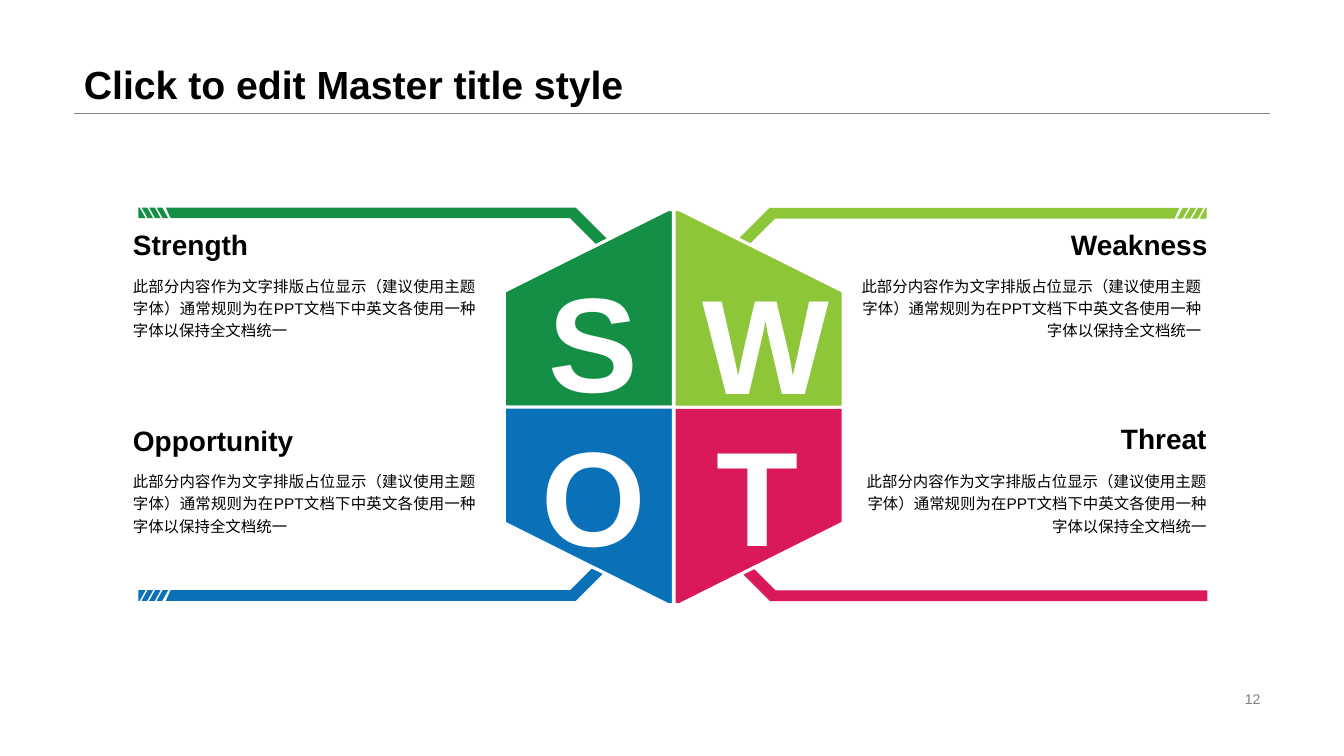
from dataclasses import dataclass

from lxml.etree import SubElement
from pptx import Presentation
from pptx.dml.color import RGBColor
from pptx.enum.shapes import MSO_CONNECTOR as Connector
from pptx.enum.text import MSO_ANCHOR as Anchor, PP_ALIGN as Align
from pptx.oxml.ns import qn
from pptx.util import Cm, Pt

BODY = "此部分内容作为文字排版占位显示（建议使用主题字体）通常规则为在PPT文档下中英文各使用一种字体以保持全文档统一"
CENTER_X, CENTER_Y = 16.98, 10.26
BODY_W, BODY_H = 8.64, 3.18
HEADING_W, HEADING_H = 4.98, 0.86


def color(hex_code):
    return RGBColor.from_string(hex_code)


def write(frame, text, size=11, bold=False, ink="000000", align=Align.LEFT,
          anchor=Anchor.TOP, spacing=None, inset=None):
    frame.word_wrap = True
    frame.vertical_anchor = anchor
    if inset is not None:
        frame.margin_left = frame.margin_right = Cm(inset)
        frame.margin_top = frame.margin_bottom = Cm(inset)
    paragraph = frame.paragraphs[0]
    paragraph.alignment = align
    paragraph.line_spacing = spacing
    run = paragraph.add_run()
    run.text = text
    run.font.name = "Arial"
    run.font.size = Pt(size)
    run.font.bold = bold
    run.font.color.rgb = color(ink)


@dataclass
class Factor:
    """One SWOT field; side is -1 left or 1 right, level is -1 top or 1 bottom."""
    letter: str
    name: str
    fill: str
    side: int
    level: int
    ribbon_start: tuple
    heading_at: tuple
    body_at: tuple
    body_align: Align
    letter_box: tuple
    striped: bool = True


class SwotSlide:
    def __init__(self, deck):
        self.slide = deck.slides.add_slide(deck.slide_layouts[5])
        self.shapes = self.slide.shapes

    def title(self, text, left, top, width, height):
        holder = self.shapes.title
        holder.left, holder.top = Cm(left), Cm(top)
        holder.width, holder.height = Cm(width), Cm(height)
        write(holder.text_frame, text, size=28, bold=True,
              anchor=Anchor.BOTTOM, spacing=0.9)

    def text(self, text, left, top, width, height, **style):
        box = self.shapes.add_textbox(Cm(left), Cm(top), Cm(width), Cm(height))
        write(box.text_frame, text, **style)

    def rule(self, x1, x2, y, ink, weight):
        line = self.shapes.add_connector(
            Connector.STRAIGHT, Cm(x1), Cm(y), Cm(x2), Cm(y))
        line.line.color.rgb = color(ink)
        line.line.width = Pt(weight)
        SubElement(line._element.spPr, qn("a:effectLst"))

    def outline(self, contours, origin, direction, fill, border=None):
        """Draw closed contours, given as offsets from origin along direction."""
        (ox, oy), (dx, dy) = origin, direction
        builder = None
        for contour in contours:
            points = [(Cm(ox + dx * x), Cm(oy + dy * y)) for x, y in contour]
            if builder is None:
                builder = self.shapes.build_freeform(*points[0])
            else:
                builder.move_to(*points[0])
            builder.add_line_segments(points[1:], close=True)
        shape = builder.convert_to_shape()
        shape.shadow.inherit = False
        shape.fill.solid()
        shape.fill.fore_color.rgb = color(fill)
        if border:
            shape.line.color.rgb = color(border)
            shape.line.width = Pt(2.25)
        else:
            shape.line.fill.background()

    def ribbon(self, factor):
        thick, slant = 0.27, 0.15
        tail = 0.69 if factor.striped else 0
        tail_slant = 0.12 if factor.striped else 0
        contours = [[(tail, 0), (11.02, 0), (13.51, 2.49), (13.51, 4.98),
                     (13.26, 4.98), (13.26, 2.65), (10.88, thick),
                     (tail + tail_slant, thick)]]
        if factor.striped:
            for step in range(4):
                start = 0.46 - 0.19 * step
                end = start + 0.14
                inner = start + slant if start > 0 else 0
                contours.append([(max(start, 0), 0), (end, 0),
                                 (end + slant, thick), (inner, thick)])
        self.outline(contours, factor.ribbon_start,
                     (-factor.side, -factor.level), factor.fill)

    def quadrant(self, factor):
        corners = [(0, 0), (4.26, 0), (4.26, 2.92), (0.13, 4.98), (0, 4.98)]
        self.outline([corners], (CENTER_X + 0.01 * factor.side, CENTER_Y),
                     (factor.side, factor.level), factor.fill, border="FFFFFF")

    def caption(self, factor):
        align = Align.RIGHT if factor.side > 0 else Align.LEFT
        self.text(BODY, *factor.body_at, BODY_W, BODY_H,
                  align=factor.body_align, spacing=1.2, inset=0)
        self.text(factor.name, *factor.heading_at, HEADING_W, HEADING_H,
                  size=20, bold=True, align=align, inset=0)


FACTORS = [
    Factor("S", "Strength", "158F46", -1, -1, (3.49, 5.23), (3.35, 5.74),
           (3.35, 6.88), Align.JUSTIFY, (12.73, 6.38, 4.47, 4.37)),
    Factor("O", "Opportunity", "0A71B8", -1, 1, (3.49, 15.14), (3.35, 10.67),
           (3.35, 11.81), Align.JUSTIFY, (12.73, 10.26, 4.47, 4.37)),
    Factor("T", "Threat", "DA195C", 1, 1, (30.43, 15.15), (25.43, 10.62),
           (21.77, 11.81), Align.RIGHT, (17.04, 10.26, 4.09, 4.37), False),
    Factor("W", "Weakness", "8DC639", 1, -1, (30.41, 5.24), (25.45, 5.74),
           (21.64, 6.88), Align.RIGHT, (17.45, 6.43, 3.35, 4.37)),
]


def main():
    deck = Presentation()
    deck.slide_width, deck.slide_height = Cm(33.87), Cm(19.05)
    swot = SwotSlide(deck)

    # Title, rule and page number
    swot.rule(1.86, 32.01, 2.86, "808080", 0.25)
    swot.title("Click to edit Master title style", 1.86, 0, 30.15, 2.86)
    swot.text("12", 23.93, 17.32, 8.08, 0.58, size=10, ink="808080",
              align=Align.RIGHT, anchor=Anchor.MIDDLE)

    # Ribbons behind the hexagon, then captions
    for factor in FACTORS:
        swot.ribbon(factor)
    for factor in FACTORS:
        swot.caption(factor)

    # Hexagon quadrants with their letters
    for factor in FACTORS:
        swot.quadrant(factor)
    for factor in FACTORS:
        swot.text(factor.letter, *factor.letter_box, size=96, bold=True,
                  ink="FFFFFF", align=Align.CENTER)

    deck.save("out.pptx")


if __name__ == "__main__":
    main()
